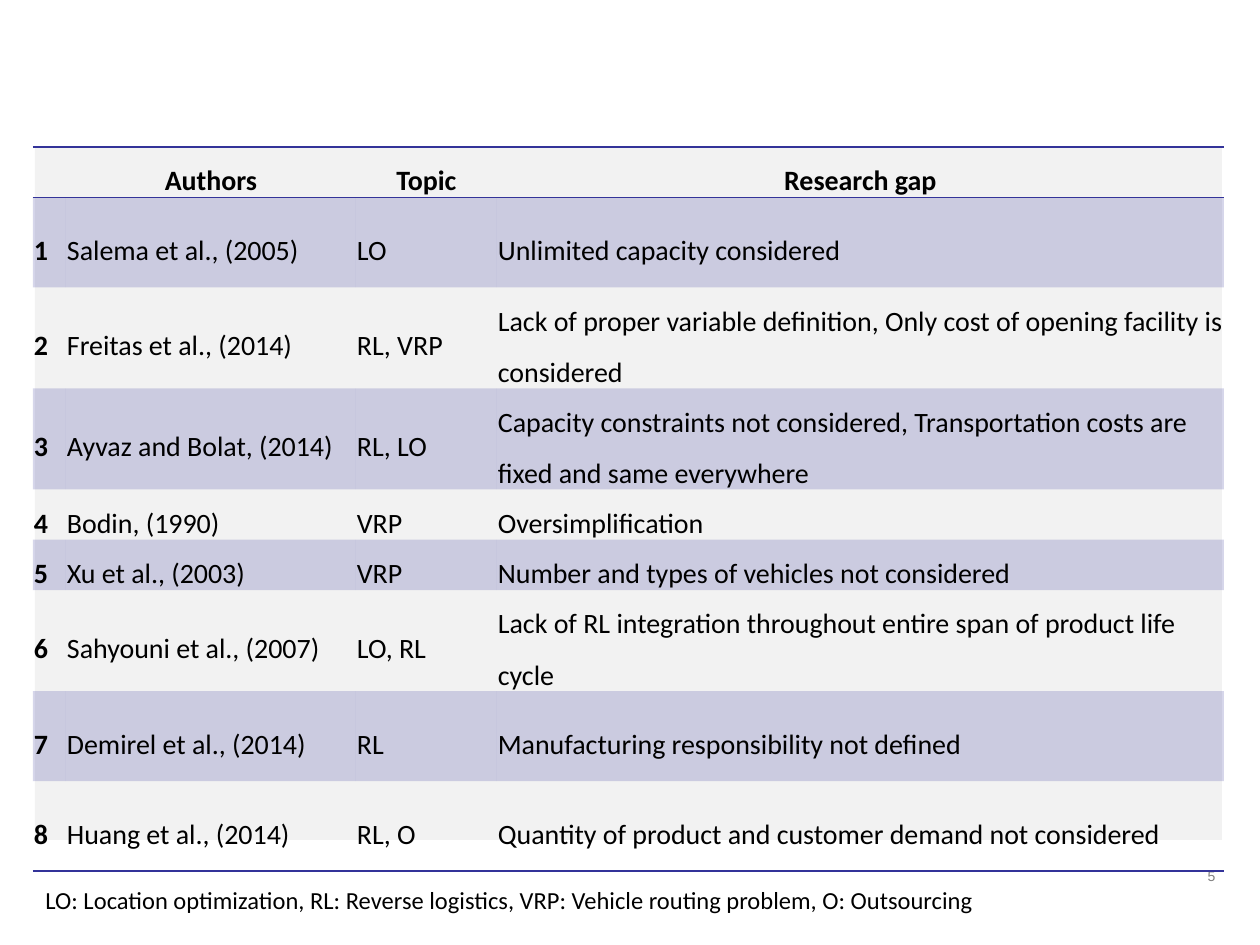
import pptx
import pptx.util
import pptx.dml.color
import pptx.enum.shapes
import pptx.enum.text
import pptx.oxml
import pptx.oxml.ns

PX = 914400 // 126
INK = "000000"
BLUE = "333399"
ALIGN = pptx.enum.text.PP_ALIGN


def paint(color, code):
    color.rgb = pptx.dml.color.RGBColor.from_string(code)


def write(para, text, size, face, code, bold=False):
    run = para.add_run()
    run.text = text
    run.font.size = pptx.util.Pt(size)
    run.font.name = face
    run.font.bold = bold
    run.font.fill.solid()
    paint(run.font.fill.fore_color, code)


deck = pptx.Presentation()
deck.slide_width = pptx.util.Inches(10)
deck.slide_height = pptx.util.Inches(7.5)
slide = deck.slides.add_slide(deck.slide_layouts[6])
shapes = slide.shapes

# Grey panel behind the table
panel = shapes.add_shape(pptx.enum.shapes.MSO_SHAPE.RECTANGLE,
                         35 * PX, 147 * PX, 1187 * PX, 693 * PX)
panel.shadow.inherit = False
panel.fill.solid()
paint(panel.fill.fore_color, "F2F2F2")
panel.line.fill.background()

# Slide number
num = shapes.add_textbox(1175 * PX, 861 * PX, 53 * PX, 63 * PX)
num.text_frame.word_wrap = True
para = num.text_frame.paragraphs[0]
para.alignment = ALIGN.RIGHT
write(para, "5", 8, "Arial", "808080")

# Table content
rows = [
    ("", "Authors", "Topic", "Research gap"),
    ("1", "Salema et al., (2005)", "LO", "Unlimited capacity considered"),
    ("2", "Freitas et al., (2014)", "RL, VRP",
     "Lack of proper variable definition, Only cost of opening facility is considered"),
    ("3", "Ayvaz and Bolat, (2014)", "RL, LO",
     "Capacity constraints not considered, Transportation costs are fixed and same everywhere"),
    ("4", "Bodin, (1990)", "VRP", "Oversimplification"),
    ("5", "Xu et al., (2003)", "VRP", "Number and types of vehicles not considered"),
    ("6", "Sahyouni et al., (2007)", "LO, RL",
     "Lack of RL integration throughout entire span of product life cycle"),
    ("7", "Demirel et al., (2014)", "RL", "Manufacturing responsibility not defined"),
    ("8", "Huang et al., (2014)", "RL, O",
     "Quantity of product and customer demand not considered"),
]
wide = [33, 290, 141, 727]
high = [50, 90, 101, 101, 50, 50, 101, 90, 90]
last = len(rows) - 1

# Table with no style of its own
frame = shapes.add_table(len(rows), len(wide), 33 * PX, 147 * PX,
                         sum(wide) * PX, sum(high) * PX)
table = frame.table
table.first_row = False
table.horz_banding = False
style = table._tbl.tblPr.find(pptx.oxml.ns.qn("a:tableStyleId"))
style.text = "{2D5ABB26-0587-4C30-8999-92F81FD0307C}"
for col, width in zip(table.columns, wide):
    col.width = width * PX
for row, height in zip(table.rows, high):
    row.height = height * PX

# Cells: text, banding and rules
for r, row in enumerate(rows):
    for c, text in enumerate(row):
        cell = table.cell(r, c)
        cell.margin_left = cell.margin_right = PX
        cell.margin_top = cell.margin_bottom = 0
        cell.vertical_anchor = pptx.enum.text.MSO_ANCHOR.MIDDLE
        para = cell.text_frame.paragraphs[0]
        para.line_spacing = 1.5
        para.alignment = ALIGN.CENTER if r == 0 else ALIGN.LEFT
        if text:
            write(para, text, 16, "Calibri", INK, r == 0 or c == 0)
        else:
            para.font.size = pptx.util.Pt(10)

        props = cell._tc.get_or_add_tcPr()
        if r % 2:
            cell.fill.solid()
            paint(cell.fill.fore_color, BLUE)
            tint = props.find(".//" + pptx.oxml.ns.qn("a:srgbClr"))
            tint.append(pptx.oxml.parse_xml(
                f'<a:alpha {pptx.oxml.ns.nsdecls("a")} val="20000"/>'))
        else:
            cell.fill.background()

        sides = {0: ("lnB", "lnT"), last: ("lnB",)}.get(r, ())
        for side in sides:
            props.insert(0, pptx.oxml.parse_xml(
                f'<a:{side} {pptx.oxml.ns.nsdecls("a")} w="12700"><a:solidFill>'
                f'<a:srgbClr val="{BLUE}"/></a:solidFill></a:{side}>'))

# Key to the short forms
key = shapes.add_textbox(33 * PX, 879 * PX, 1191 * PX, 81 * PX)
key.text_frame.word_wrap = True
write(key.text_frame.paragraphs[0],
      "LO: Location optimization, RL: Reverse logistics, "
      "VRP: Vehicle routing problem, O: Outsourcing", 14, "Calibri", INK)

deck.save("out.pptx")
